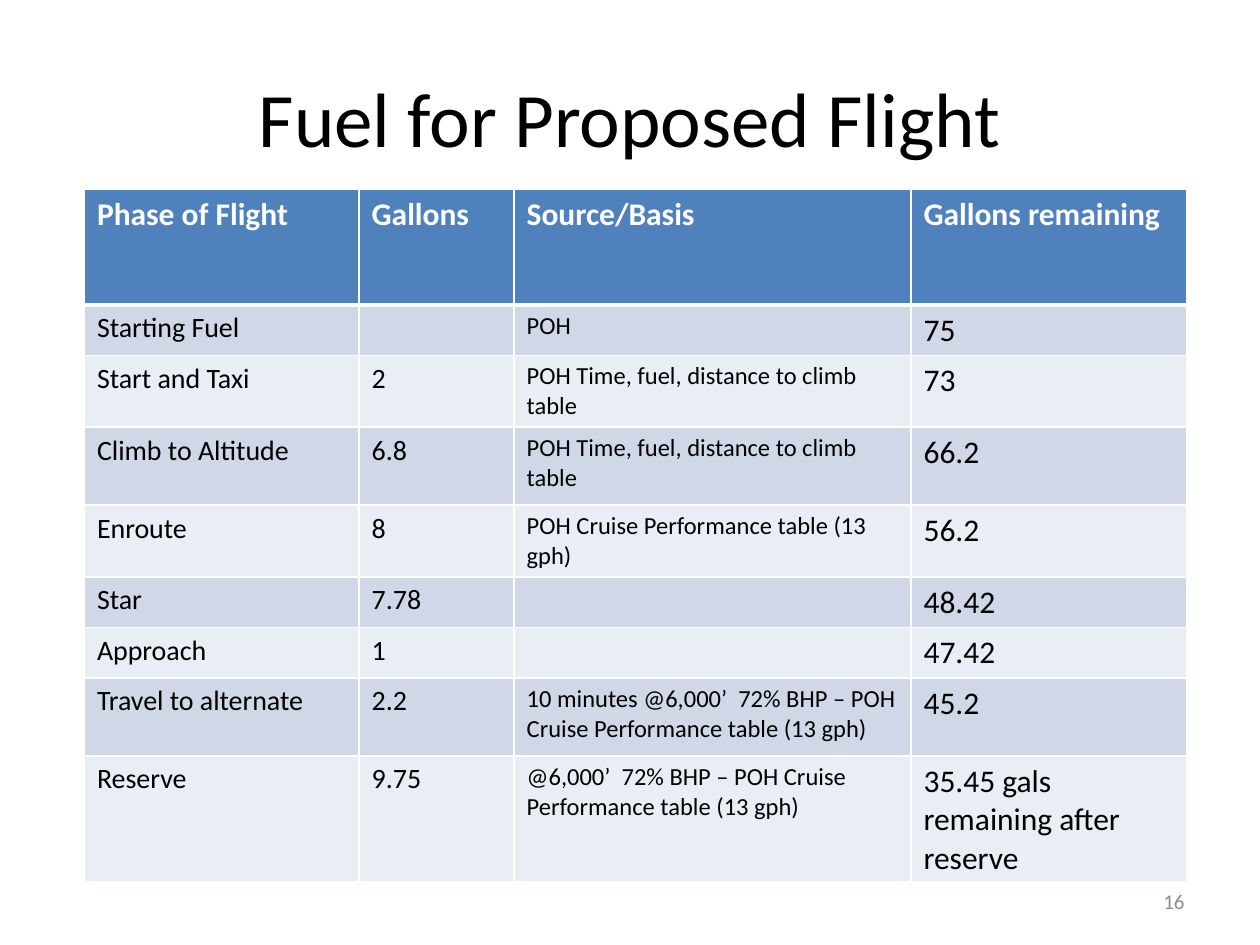
from dataclasses import dataclass

from lxml import etree
from pptx import Presentation
from pptx.dml.color import RGBColor
from pptx.enum.text import MSO_ANCHOR, PP_ALIGN
from pptx.oxml.ns import qn
from pptx.util import Inches, Pt

MIDDLE = MSO_ANCHOR.MIDDLE
LEFT, CENTER, RIGHT = PP_ALIGN.LEFT, PP_ALIGN.CENTER, PP_ALIGN.RIGHT
TITLE_ONLY = 5


@dataclass(frozen=True)
class Theme:
    font: str = "Calibri"
    text: str = "000000"
    white: str = "FFFFFF"
    muted: str = "8C8C8C"
    header: str = "4F81BD"
    bands: tuple = ("D0D8E8", "E9EDF4")
    title_size: int = 44
    header_size: int = 18
    column_sizes: tuple = (16, 16, 14, 18)
    number_size: int = 12
    grid_line: int = 1
    header_line: int = 3


HEADINGS = ("Phase of Flight", "Gallons", "Source/Basis", "Gallons remaining")
CLIMB_TABLE = "POH Time, fuel, distance to climb table"
CRUISE_TABLE = "POH Cruise Performance table (13 gph)"
PHASES = (
    ("Starting Fuel", "", "POH", "75"),
    ("Start and Taxi", "2", CLIMB_TABLE, "73"),
    ("Climb to Altitude", "6.8", CLIMB_TABLE, "66.2"),
    ("Enroute", "8", CRUISE_TABLE, "56.2"),
    ("Star", "7.78", "", "48.42"),
    ("Approach", "1", "", "47.42"),
    ("Travel to alternate", "2.2",
     f"10 minutes @6,000’  72% BHP – {CRUISE_TABLE}", "45.2"),
    ("Reserve", "9.75", f"@6,000’  72% BHP – {CRUISE_TABLE}",
     "35.45 gals remaining after reserve"),
)
COLUMN_WIDTHS = (2.18, 1.23, 3.15, 2.19)
ROW_HEIGHTS = (0.92, 0.4, 0.57, 0.62, 0.57, 0.4, 0.4, 0.62, 1)


class SlideBuilder:
    """Holds the theme and the slide that elements are added to."""

    def __init__(self, page, theme):
        self.page = page
        self.theme = theme

    def add_text(self, frame, text, size, color, align=LEFT, bold=False):
        para = frame.paragraphs[0]
        para.alignment = align
        span = para.add_run()
        span.text = text
        span.font.name = self.theme.font
        span.font.size = Pt(size)
        span.font.bold = bold
        span.font.color.rgb = RGBColor.from_string(color)

    def title(self, text, left, top, width, height):
        box = self.page.shapes.title
        box.left, box.top = Inches(left), Inches(top)
        box.width, box.height = Inches(width), Inches(height)
        box.text_frame.vertical_anchor = MIDDLE
        self.add_text(box.text_frame, text, self.theme.title_size,
                      self.theme.text, CENTER)

    def page_number(self, text, left, top, width, height):
        box = self.page.shapes.add_textbox(
            Inches(left), Inches(top), Inches(width), Inches(height))
        box.text_frame.word_wrap = True
        box.text_frame.vertical_anchor = MIDDLE
        self.add_text(box.text_frame, text, self.theme.number_size,
                      self.theme.muted, RIGHT)

    def borders(self, cell, top, bottom):
        """Draw white cell edges; must run before the fill is set."""
        properties = cell._tc.get_or_add_tcPr()
        side = self.theme.grid_line
        for tag, width in (("a:lnL", side), ("a:lnR", side),
                           ("a:lnT", top), ("a:lnB", bottom)):
            line = etree.SubElement(properties, qn(tag), w=str(Pt(width)))
            fill = etree.SubElement(line, qn("a:solidFill"))
            etree.SubElement(fill, qn("a:srgbClr"), val=self.theme.white)

    def table(self, rows, left, top, widths, heights):
        """Add a table whose first row is the header and whose body is banded."""
        theme = self.theme
        grid = self.page.shapes.add_table(
            len(rows), len(widths), Inches(left), Inches(top),
            Inches(sum(widths)), Inches(sum(heights))).table
        for column, width in zip(grid.columns, widths):
            column.width = Inches(width)
        for row, height in zip(grid.rows, heights):
            row.height = Inches(height)

        for r, values in enumerate(rows):
            is_header = r == 0
            fill = theme.header if is_header else theme.bands[(r - 1) % 2]
            color = theme.white if is_header else theme.text
            above = theme.header_line if r == 1 else theme.grid_line
            below = theme.header_line if is_header else theme.grid_line
            for c, value in enumerate(values):
                cell = grid.cell(r, c)
                self.borders(cell, above, below)
                cell.fill.solid()
                cell.fill.fore_color.rgb = RGBColor.from_string(fill)
                if value:
                    size = theme.header_size if is_header else theme.column_sizes[c]
                    self.add_text(cell.text_frame, value, size, color, bold=is_header)


def main():
    deck = Presentation()
    deck.slide_width, deck.slide_height = Inches(10), Inches(7.5)
    page = deck.slides.add_slide(deck.slide_layouts[TITLE_ONLY])
    builder = SlideBuilder(page, Theme())
    builder.title("Fuel for Proposed Flight", 0.5, 0.3, 9, 1.25)
    builder.page_number("16", 7.17, 6.95, 2.33, 0.4)
    builder.table((HEADINGS, *PHASES), 0.67, 1.5, COLUMN_WIDTHS, ROW_HEIGHTS)
    deck.save("out.pptx")


if __name__ == "__main__":
    main()
